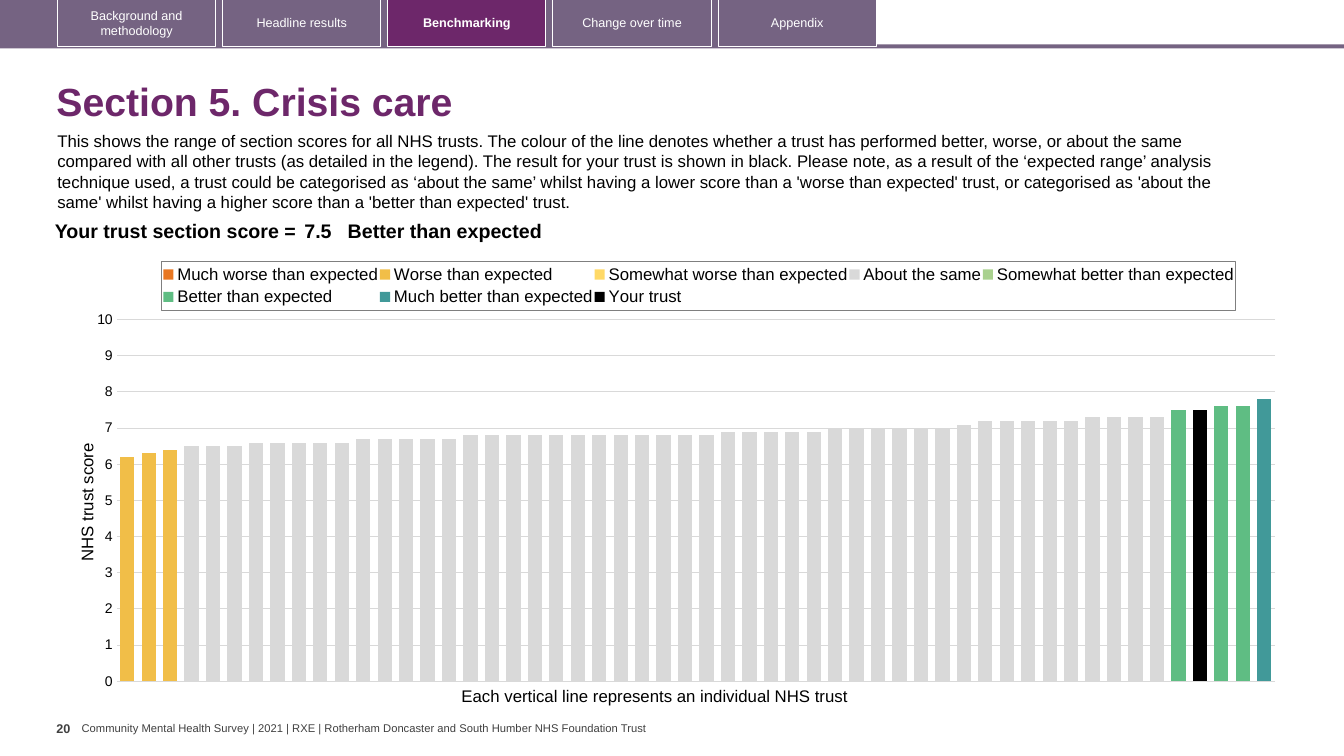
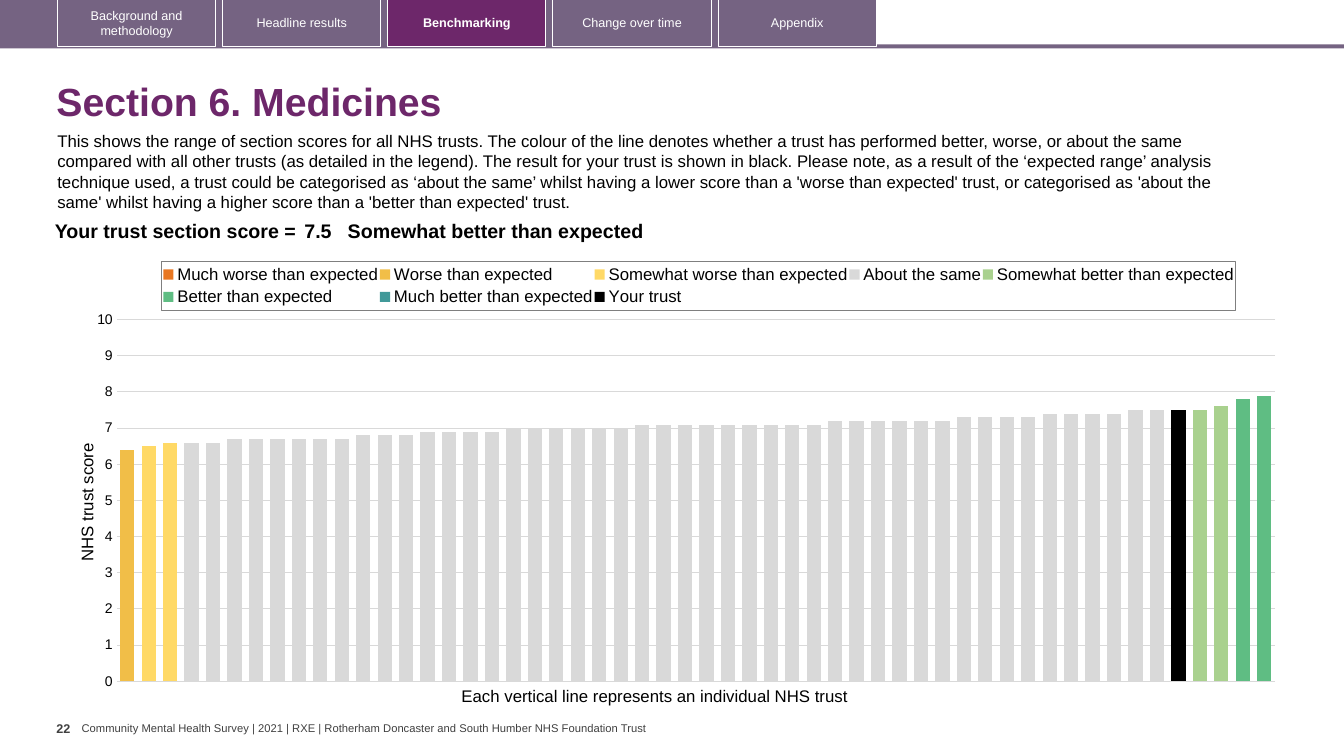
from copy import deepcopy
from dataclasses import dataclass

from pptx import Presentation
from pptx.chart.data import CategoryChartData
from pptx.dml.color import RGBColor
from pptx.enum.chart import XL_CHART_TYPE, XL_LEGEND_POSITION, XL_TICK_MARK
from pptx.enum.shapes import MSO_SHAPE
from pptx.enum.text import MSO_ANCHOR, MSO_AUTO_SIZE, PP_ALIGN
from pptx.oxml import parse_xml
from pptx.oxml.ns import nsdecls
from pptx.util import Inches, Pt

COLUMNS, ROWS = 160, 90
TABS = ["Background and methodology", "Headline results", "Benchmarking", "Change over time", "Appendix"]
ACTIVE_TAB = "Benchmarking"
FOOTER = "Community Mental Health Survey | 2021 | RXE | Rotherham Doncaster and South Humber NHS Foundation Trust"
INTRODUCTION = (
    "This shows the range of section scores for all NHS trusts. The colour of the line denotes whether a trust "
    "has performed better, worse, or about the same compared with all other trusts (as detailed in the legend). "
    "The result for your trust is shown in black. Please note, as a result of the ‘expected range’ analysis "
    "technique used, a trust could be categorised as ‘about the same’ whilst having a lower score than a 'worse "
    "than expected' trust, or categorised as 'about the same' whilst having a higher score than a 'better than "
    "expected' trust."
)
CAPTION = "Each vertical line represents an individual NHS trust"
RATING_COLORS = {
    "Much worse than expected": "E87722",
    "Worse than expected": "F1BE48",
    "Somewhat worse than expected": "FFD966",
    "About the same": "D9D9D9",
    "Somewhat better than expected": "A9D18E",
    "Better than expected": "5FBD83",
    "Much better than expected": "419999",
}
SECTIONS = [
    {
        "title": "Section 5. Crisis care",
        "page": "20",
        "rating": "Better than expected",
        "score_counts": {6.2: 1, 6.3: 1, 6.4: 1, 6.5: 3, 6.6: 5, 6.7: 5, 6.8: 12, 6.9: 5, 7.0: 6,
                         7.1: 1, 7.2: 5, 7.3: 4, 7.5: 2, 7.6: 2, 7.8: 1},
        "rating_counts": {"Worse than expected": 3, "About the same": 46,
                          "Better than expected": 4, "Much better than expected": 1},
        "own_position": 50,
    },
    {
        "title": "Section 6. Medicines",
        "page": "22",
        "rating": "Somewhat better than expected",
        "score_counts": {6.4: 1, 6.5: 1, 6.6: 3, 6.7: 6, 6.8: 3, 6.9: 4, 7.0: 6, 7.1: 9, 7.2: 6,
                         7.3: 4, 7.4: 4, 7.5: 4, 7.6: 1, 7.8: 1, 7.9: 1},
        "rating_counts": {"Worse than expected": 1, "Somewhat worse than expected": 2, "About the same": 46,
                          "Somewhat better than expected": 3, "Better than expected": 2},
        "own_position": 49,
    },
]


@dataclass(frozen=True)
class Theme:
    """Colours, fonts and type sizes."""

    accent: str = "6D276A"
    band: str = "756382"
    white: str = "FFFFFF"
    black: str = "000000"
    grey: str = "404040"
    grid: str = "D9D9D9"
    legend_border: str = "7F7F7F"
    font: str = "Arial"
    chart_font: str = "Calibri"
    title: int = 28
    score: int = 14
    body: int = 12
    axis: int = 10
    tab: int = 9
    footer: int = 8


def format_font(font, name, size, color, bold=False):
    """Set the face, size, colour and weight of a font."""
    font.name, font.size, font.bold = name, Pt(size), bold
    font.color.rgb = RGBColor.from_string(color)


def write_text(frame, text, size=12, color="000000", bold=False, align=PP_ALIGN.LEFT,
               anchor=MSO_ANCHOR.TOP, insets=None, spacing=None, font=Theme.font):
    """Fill a text frame with one formatted paragraph."""
    frame.word_wrap, frame.auto_size = True, MSO_AUTO_SIZE.NONE
    frame.vertical_anchor = anchor
    if insets is not None:
        frame.margin_left = frame.margin_right = Inches(insets[0])
        frame.margin_top = frame.margin_bottom = Inches(insets[1])
    paragraph = frame.paragraphs[0]
    paragraph.alignment, paragraph.line_spacing = align, spacing
    run = paragraph.add_run()
    run.text = text
    format_font(run.font, font, size, color, bold)


def set_layout(parent, index, inner=False, **shares):
    """Place a chart part at shares of the chart's size."""
    for old in parent.xpath("c:layout"):
        parent.remove(old)
    target = '<c:layoutTarget val="inner"/>' if inner else ""
    modes = "".join(f'<c:{axis}Mode val="edge"/>' for axis in "xy")
    values = "".join(f'<c:{key} val="{value}"/>' for key, value in shares.items())
    parent.insert(index, parse_xml(
        f'<c:layout {nsdecls("c")}><c:manualLayout>{target}{modes}{values}</c:manualLayout></c:layout>'))


def move_last_series_to_second_axis(plot_area):
    """Draw the last series over the others on hidden secondary axes."""
    main = plot_area.xpath("c:barChart")[0]
    overlay = deepcopy(main)
    main.remove(main.xpath("c:ser")[-1])
    for series in overlay.xpath("c:ser")[:-1]:
        overlay.remove(series)
    main.addnext(overlay)
    axes = [deepcopy(axis) for axis in plot_area.xpath("c:valAx | c:catAx")]
    for axis in axes:
        for part in axis.xpath("c:title | c:majorGridlines"):
            axis.remove(part)
        axis.xpath("c:delete")[0].set("val", "1")
    for part in [overlay, *axes]:
        for link in part.xpath("c:axId | c:crossAx"):
            link.set("val", str(int(link.get("val")) + 7))
    axis_anchor = plot_area.xpath("c:valAx")[-1]
    for axis in axes:
        axis_anchor.addnext(axis)


class Deck:
    """Holds the theme, the presentation and the current slide."""

    def __init__(self, theme):
        """Open a widescreen presentation with a bare title layout."""
        self.theme = theme
        self.presentation = Presentation()
        self.presentation.slide_width, self.presentation.slide_height = Inches(13.33), Inches(7.5)
        self.layout = self.presentation.slide_layouts[5]
        for placeholder in list(self.layout.placeholders)[1:]:
            self.layout.shapes.element.remove(placeholder.element)
        self.slide = None

    def place(self, column, row, columns, rows):
        """Turn grid units into left, top, width and height."""
        across = self.presentation.slide_width / COLUMNS
        down = self.presentation.slide_height / ROWS
        return [round(length) for length in (column * across, row * down, columns * across, rows * down)]

    def add_slide(self, title):
        """Start a slide and format its title."""
        self.slide = self.presentation.slides.add_slide(self.layout)
        shape = self.slide.shapes.title
        shape.left, shape.top, shape.width, shape.height = self.place(5.52, 8.04, 149.88, 8.64)
        write_text(shape.text_frame, title, size=self.theme.title, color=self.theme.accent, bold=True,
                   anchor=MSO_ANCHOR.MIDDLE, spacing=0.9)

    def add_box(self, *grid, fill=None, line=None):
        """Add a rectangle."""
        shape = self.slide.shapes.add_shape(MSO_SHAPE.RECTANGLE, *self.place(*grid))
        shape.shadow.inherit = False
        if fill:
            shape.fill.solid()
            shape.fill.fore_color.rgb = RGBColor.from_string(fill)
        else:
            shape.fill.background()
        if line:
            shape.line.color.rgb = RGBColor.from_string(line)
            shape.line.width = Pt(0.75)
        else:
            shape.line.fill.background()
        return shape

    def add_text(self, text, *grid, **text_format):
        """Add a text box."""
        shape = self.slide.shapes.add_textbox(*self.place(*grid))
        write_text(shape.text_frame, text, **text_format)
        return shape

    def add_furniture(self):
        """Draw the footer and tabs and hand them to the layout."""
        theme = self.theme
        shapes = [
            self.add_text(FOOTER, 9.72, 85.92, 70, 1.56, size=theme.footer, color=theme.grey,
                          anchor=MSO_ANCHOR.MIDDLE, insets=(0, 0)),
            self.add_box(0, 5.28, COLUMNS, 0.48, fill=theme.band),
            self.add_box(0, 0, 104.4, 5.6, fill=theme.band),
        ]
        for index, label in enumerate(TABS):
            active = label == ACTIVE_TAB
            tab = self.add_box(6.84 + 19.66 * index, -0.12, 18.84, 5.64,
                               fill=theme.accent if active else None, line=theme.white)
            write_text(tab.text_frame, label, size=theme.tab, color=theme.white, bold=active,
                       align=PP_ALIGN.CENTER, anchor=MSO_ANCHOR.MIDDLE)
            shapes.append(tab)
        for shape in shapes:
            self.layout.shapes.element.append(shape.element)

    def add_score(self, score, rating):
        """Add the one-row table with the trust's score."""
        widths = (31.56, 5.64, 103.08)
        frame = self.slide.shapes.add_table(1, 3, *self.place(4.2, 25.8, sum(widths), 3.72))
        table = frame.table
        table.first_row = table.horz_banding = False
        texts = ("Your trust section score =", f"{score:.1f}", rating)
        aligns = (PP_ALIGN.RIGHT, PP_ALIGN.LEFT, PP_ALIGN.LEFT)
        for index, (text, width, align) in enumerate(zip(texts, widths, aligns)):
            table.columns[index].width = self.place(0, 0, width, 0)[2]
            cell = table.cell(0, index)
            cell.fill.background()
            cell.margin_left = cell.margin_right = Inches(0 if index == 2 else 0.04)
            cell.margin_top = cell.margin_bottom = Inches(0.04)
            paragraph = cell.text_frame.paragraphs[0]
            paragraph.text, paragraph.alignment = text, align
            format_font(paragraph.runs[0].font, self.theme.font, self.theme.score, self.theme.black, True)

    def add_score_chart(self, scores, rating_counts, own_position):
        """Add the columns of all trusts, coloured by rating."""
        theme = self.theme
        ratings = [name for name, count in rating_counts.items() for _ in range(count)]
        data = CategoryChartData()
        data.categories = [str(number) for number in range(1, len(scores) + 1)]
        for name in RATING_COLORS:
            data.add_series(name, [score if rating == name else None for score, rating in zip(scores, ratings)])
        data.add_series("Your trust", [score if index == own_position else None
                                       for index, score in enumerate(scores)])
        chart = self.slide.shapes.add_chart(
            XL_CHART_TYPE.COLUMN_CLUSTERED, *self.place(8.04, 29.64, 145.8, 53.28), data).chart
        chart.has_title = False
        format_font(chart.font, theme.chart_font, theme.axis, theme.black)
        plot = chart.plots[0]
        plot.gap_width, plot.overlap, plot.vary_by_categories = 50, 100, False
        for series, color in zip(plot.series, [*RATING_COLORS.values(), theme.black]):
            series.invert_if_negative = False
            series.format.fill.solid()
            series.format.fill.fore_color.rgb = RGBColor.from_string(color)
        chart.category_axis.visible = False
        self.format_value_axis(chart.value_axis)
        self.format_legend(chart)
        plot_area = chart.element.xpath("c:chart/c:plotArea")[0]
        set_layout(plot_area, 0, inner=True, x=0.04, y=0.158, w=0.946, h=0.808)
        move_last_series_to_second_axis(plot_area)

    def format_value_axis(self, axis):
        """Style the score axis, its grid and its title."""
        theme = self.theme
        axis.minimum_scale, axis.maximum_scale, axis.major_unit = 0, 10, 1
        axis.major_tick_mark = axis.minor_tick_mark = XL_TICK_MARK.NONE
        axis.format.line.fill.background()
        axis.major_gridlines.format.line.color.rgb = RGBColor.from_string(theme.grid)
        axis.major_gridlines.format.line.width = Pt(0.75)
        format_font(axis.tick_labels.font, theme.font, theme.axis, theme.black)
        run = axis.axis_title.text_frame.paragraphs[0].add_run()
        run.text = "NHS trust score"
        format_font(run.font, theme.font, theme.body, theme.black)
        set_layout(axis.axis_title.element, 1, x=0.005, y=0.427)

    def format_legend(self, chart):
        """Place a framed legend above the plot."""
        theme = self.theme
        chart.has_legend = True
        chart.legend.position = XL_LEGEND_POSITION.TOP
        chart.legend.include_in_layout = False
        format_font(chart.legend.font, theme.font, theme.body, theme.black)
        legend = chart.element.xpath("c:chart/c:legend")[0]
        set_layout(legend, 1, x=0.077, y=0.027, w=0.877, h=0.11)
        legend.xpath("c:txPr")[0].addprevious(parse_xml(
            f'<c:spPr {nsdecls("c", "a")}><a:ln w="9525"><a:solidFill>'
            f'<a:srgbClr val="{theme.legend_border}"/></a:solidFill></a:ln></c:spPr>'))

    def add_section(self, title, page, rating, score_counts, rating_counts, own_position):
        """Build one benchmarking slide."""
        theme = self.theme
        scores = [score for score, count in score_counts.items() for _ in range(count)]
        self.add_slide(title)
        if len(self.presentation.slides) == 1:
            self.add_furniture()
        self.add_text(page, 6.72, 85.2, 3, 4.8, size=theme.tab, color=theme.grey, bold=True, insets=(0, 0.05))
        self.add_text(INTRODUCTION, 5.64, 15, 145.56, 10.92, size=theme.body)
        self.add_text(CAPTION, 53.76, 81, 50, 3.6, size=theme.body)
        self.add_score_chart(scores, rating_counts, own_position)
        self.add_score(scores[own_position], rating)


def main():
    """Build and save the deck."""
    deck = Deck(Theme())
    for section in SECTIONS:
        deck.add_section(**section)
    deck.presentation.save("out.pptx")


if __name__ == "__main__":
    main()
